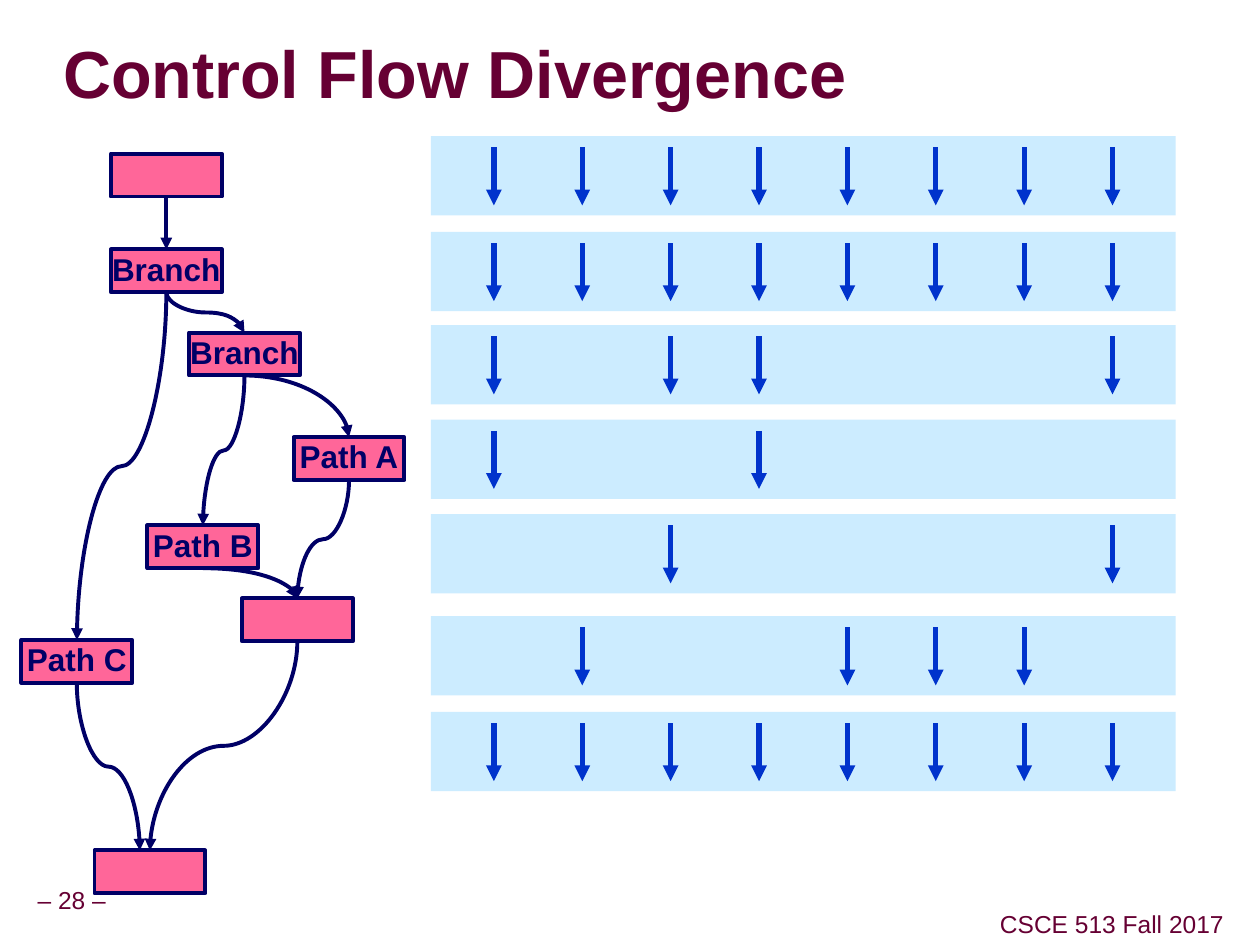
from lxml.etree import SubElement
from pptx import Presentation
from pptx.dml.color import RGBColor
from pptx.enum.shapes import MSO_CONNECTOR, MSO_SHAPE
from pptx.enum.text import MSO_ANCHOR, PP_ALIGN
from pptx.oxml.ns import qn
from pptx.util import Inches, Pt

MAROON = RGBColor(0x66, 0x00, 0x33)
NAVY = RGBColor(0x00, 0x00, 0x66)
BLUE = RGBColor(0x00, 0x33, 0xCC)
PALE_BLUE = RGBColor(0xCC, 0xEC, 0xFF)
PINK = RGBColor(0xFF, 0x66, 0x99)

TITLE = "Control Flow Divergence"
FOOTERS = [("– 28 –", 0.24, 7, 0.66), ("CSCE 513 Fall 2017", 7.88, 7.19, 1.89)]

BLOCK_WIDTH, BLOCK_HEIGHT = 0.88, 0.34
BLOCKS = {
    "entry": ("", 0.88, 1.22),
    "outer branch": ("Branch", 0.88, 1.98),
    "inner branch": ("Branch", 1.5, 2.64),
    "path a": ("Path A", 2.33, 3.47),
    "path b": ("Path B", 1.17, 4.17),
    "path c": ("Path C", 0.17, 5.08),
    "inner join": ("", 1.92, 4.75),
    "exit": ("", 0.75, 6.75),
}
S_CURVES = [
    ("outer branch", "path c", 0),
    ("outer branch", "inner branch", 0),
    ("inner branch", "path b", 0),
    ("path a", "inner join", 0),
    ("path c", "exit", -0.08),
    ("inner join", "exit", 0),
]
QUARTER_CURVES = [("inner branch", "path a"), ("path b", "inner join")]

LANE_LEFT, LANE_WIDTH, LANE_HEIGHT = 3.42, 5.91, 0.63
THREAD_LEFT, THREAD_STEP = 3.92, 0.7014
THREAD_INSET, THREAD_LENGTH = 0.09, 0.46
LANES = [
    (1.08, range(8)),
    (1.84, range(8)),
    (2.58, (0, 2, 3, 7)),
    (3.33, (0, 3)),
    (4.08, (2, 7)),
    (4.89, (1, 4, 5, 6)),
    (5.65, range(8)),
]


def style_text(shape, text, size, color, bold=False, align=PP_ALIGN.CENTER,
               inset=0.05, spacing=0.9, wrap=False):
    frame = shape.text_frame
    frame.word_wrap = wrap
    frame.vertical_anchor = MSO_ANCHOR.MIDDLE
    frame.margin_left = frame.margin_right = Inches(inset)
    frame.margin_top = frame.margin_bottom = Inches(inset)
    frame.text = text
    paragraph = frame.paragraphs[0]
    paragraph.alignment = align
    paragraph.line_spacing = spacing
    font = paragraph.font
    font.name, font.size, font.bold = "Arial", Pt(size), bold
    font.color.rgb = color


def add_box(slide, left, top, width, height, fill, line=None):
    shape = slide.shapes.add_shape(MSO_SHAPE.RECTANGLE, Inches(left), Inches(top),
                                   Inches(width), Inches(height))
    shape.shadow.inherit = False
    shape.fill.solid()
    shape.fill.fore_color.rgb = fill
    if line is None:
        shape.line.fill.background()
    else:
        shape.line.color.rgb = line
        shape.line.width = Pt(2.25)
    return shape


def add_arrow(slide, kind, begin, end, color, width):
    connector = slide.shapes.add_connector(kind, *map(Inches, begin + end))
    connector.line.color.rgb = color
    connector.line.width = Pt(width)
    SubElement(connector.line._get_or_add_ln(), qn("a:tailEnd"), type="triangle")
    SubElement(connector._element.spPr, qn("a:effectLst"))
    return connector


def add_s_curve(slide, begin, end):
    center_x, center_y = (begin[0] + end[0]) / 2, (begin[1] + end[1]) / 2
    half_width, half_height = abs(end[0] - begin[0]) / 2, (end[1] - begin[1]) / 2
    leftward = end[0] < begin[0]
    reach = half_height if leftward else -half_height
    connector = add_arrow(slide, MSO_CONNECTOR.CURVE,
                          (center_x - reach, center_y - half_width),
                          (center_x + reach, center_y + half_width), NAVY, 2.25)
    degrees = 90 if leftward else 270
    connector._element.spPr.find(qn("a:xfrm")).set("rot", str(degrees * 60000))


def add_quarter_curve(slide, begin, end):
    connector = add_arrow(slide, MSO_CONNECTOR.CURVE, begin, end, NAVY, 2.25)
    connector._element.spPr.find(qn("a:prstGeom")).set("prst", "curvedConnector2")


def top_center(name, shift=0):
    _, left, top = BLOCKS[name]
    return left + BLOCK_WIDTH / 2 + shift, top


def bottom_center(name):
    x, top = top_center(name)
    return x, top + BLOCK_HEIGHT


def add_title(slide):
    title = slide.shapes.title
    title.left, title.top = Inches(0.5), Inches(0.3)
    title.width, title.height = Inches(8.08), Inches(0.63)
    style_text(title, TITLE, 38, MAROON, True, PP_ALIGN.LEFT, 0, 0.87, True)
    properties = title.text_frame.paragraphs[0].runs[0]._r.get_or_add_rPr()
    effects = SubElement(properties, qn("a:effectLst"))
    shadow = SubElement(effects, qn("a:outerShdw"), dist="38100", dir="2700000")
    SubElement(shadow, qn("a:srgbClr"), val="969696")


def add_flow_graph(slide):
    shapes = {}
    for name, (label, left, top) in BLOCKS.items():
        shapes[name] = add_box(slide, left, top, BLOCK_WIDTH, BLOCK_HEIGHT, PINK, NAVY)
        if label:
            style_text(shapes[name], label, 18, NAVY, True)
    entry_arrow = add_arrow(slide, MSO_CONNECTOR.STRAIGHT, bottom_center("entry"),
                            top_center("outer branch"), NAVY, 2.25)
    entry_arrow.begin_connect(shapes["entry"], 2)
    entry_arrow.end_connect(shapes["outer branch"], 0)
    for source, target, shift in S_CURVES:
        add_s_curve(slide, bottom_center(source), top_center(target, shift))
    for source, target in QUARTER_CURVES:
        add_quarter_curve(slide, bottom_center(source), top_center(target))


def add_lanes(slide):
    for top, threads in LANES:
        add_box(slide, LANE_LEFT, top, LANE_WIDTH, LANE_HEIGHT, PALE_BLUE)
        begin_y = top + THREAD_INSET
        for thread in threads:
            x = THREAD_LEFT + thread * THREAD_STEP
            add_arrow(slide, MSO_CONNECTOR.STRAIGHT, (x, begin_y),
                      (x, begin_y + THREAD_LENGTH), BLUE, 3)


def main():
    presentation = Presentation()
    presentation.slide_width, presentation.slide_height = Inches(10), Inches(7.5)
    slide = presentation.slides.add_slide(presentation.slide_layouts[5])
    for text, left, top, width in FOOTERS:
        footer = slide.shapes.add_textbox(Inches(left), Inches(top),
                                          Inches(width), Inches(0.31))
        style_text(footer, text, 14, MAROON)
    add_title(slide)
    add_flow_graph(slide)
    add_lanes(slide)
    presentation.save("out.pptx")


if __name__ == "__main__":
    main()
